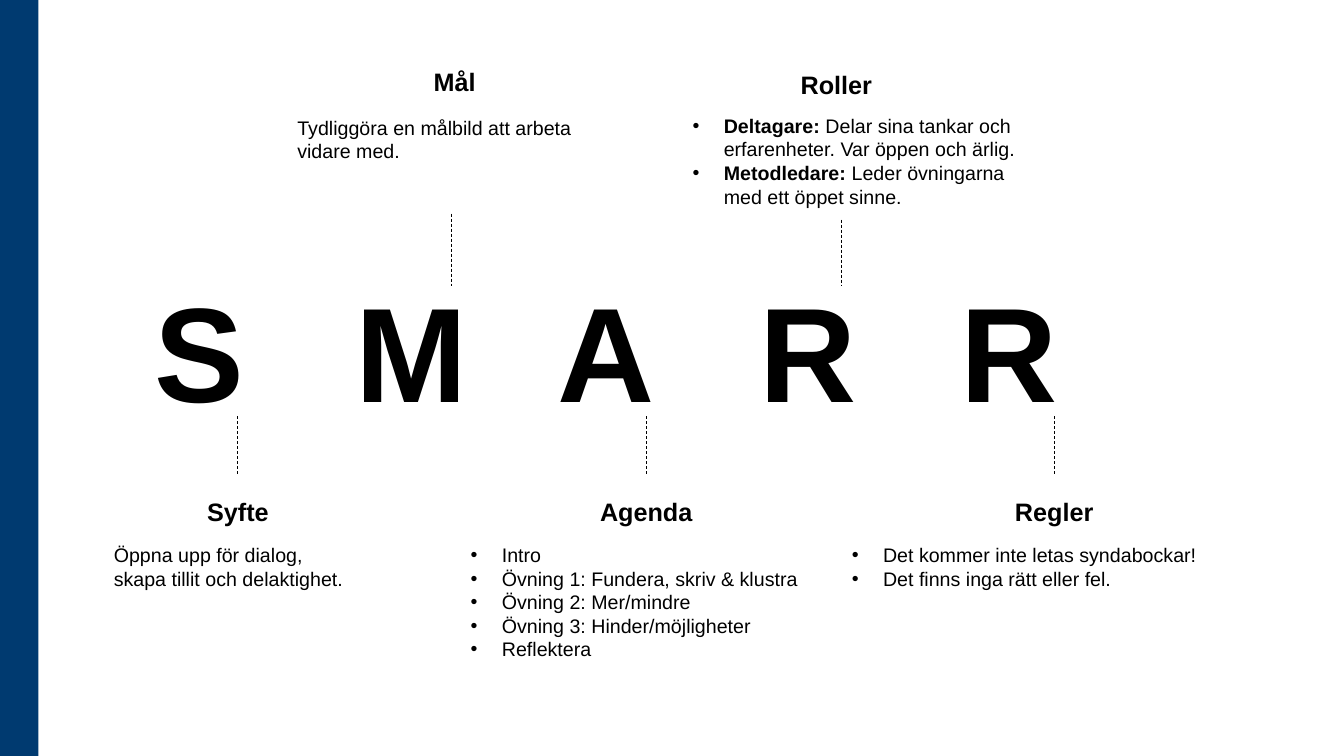
"""Builds the SMARR meeting slide: five letters, each tied to a topic above or below."""
from lxml import etree
from pptx import Presentation
from pptx.dml.color import RGBColor
from pptx.enum.dml import MSO_LINE
from pptx.enum.shapes import MSO_CONNECTOR, MSO_SHAPE
from pptx.enum.text import PP_ALIGN
from pptx.oxml.ns import qn
from pptx.util import Inches, Pt

DASH = MSO_LINE.DASH
LINE = MSO_CONNECTOR.STRAIGHT
RECT = MSO_SHAPE.RECTANGLE
LEFT, MID = PP_ALIGN.LEFT, PP_ALIGN.CENTER

THEME = {
    "font": "Arial",
    "ink": RGBColor(0x00, 0x00, 0x00),
    "bar": RGBColor(0x00, 0x3A, 0x70),
    "giant": 96,
    "head": 18,
    "body": 14,
    "rule": 0.5,
}

deck = Presentation()
deck.slide_width, deck.slide_height = Inches(13.33), Inches(7.5)
slide = deck.slides.add_slide(deck.slide_layouts[6])
shapes = slide.shapes


def place(x, y, w=0, h=0):
    """Turn percent shares of the slide into lengths."""
    wide, high = deck.slide_width / 100, deck.slide_height / 100
    return int(x * wide), int(y * high), int(w * wide), int(h * high)


def write(area, rows, size, bold=False, align=LEFT, dots=False):
    """Add a text box; a row is plain text or a bold lead with its text."""
    frame = shapes.add_textbox(*place(*area)).text_frame
    frame.word_wrap = True
    for i, row in enumerate(rows):
        para = frame.add_paragraph() if i else frame.paragraphs[0]
        lead, rest = row if isinstance(row, tuple) else (row, "")
        para.text = lead
        para.alignment = align
        if dots:
            props = para._p.get_or_add_pPr()
            props.set("marL", str(Inches(0.31)))
            props.set("indent", str(-Inches(0.31)))
            etree.SubElement(props, qn("a:buFont"), typeface="Arial")
            etree.SubElement(props, qn("a:buChar"), char="•")
        if rest:
            para.add_run().text = rest
        for j, run in enumerate(para.runs):
            run.font.name = THEME["font"]
            run.font.size = Pt(size)
            run.font.bold = bold or bool(rest and j == 0)
            run.font.color.rgb = THEME["ink"]
    return frame


bar = shapes.add_shape(RECT, *place(0, 0, 2.85, 100))
bar.shadow.inherit = False
bar.fill.solid()
bar.fill.fore_color.rgb = THEME["bar"]
bar.line.fill.background()

word = write((0, 34.8, 100, 22.93), ["\t".join("SMARR")], THEME["giant"], bold=True)
word.margin_left = Inches(1.53)
tabs = etree.SubElement(word.paragraphs[0]._p.get_or_add_pPr(), qn("a:tabLst"))
for step in range(1, 5):
    etree.SubElement(tabs, qn("a:tab"), pos=str(Inches(2 * step)), algn="l")

LOW, BASE, TEXT = (55.07, 62.67), 64.93, 71.2
TOPICS = [
    ("Syfte", (9.08, BASE, 17.25), (7.73, TEXT, 24.16, 7.6), 17.63, LOW, False,
     ["Öppna upp för dialog,\vskapa tillit och delaktighet."]),
    ("Mål", (25.36, 8.13, 16.95), (21.38, 14.67, 26.03, 7.6), 33.61, (28.27, 37.87), False,
     ["Tydliggöra en målbild att arbeta vidare med."]),
    ("Agenda", (39.46, BASE, 17.25), (34.28, TEXT, 28.88, 17.07), 48.09, LOW, True,
     ["Intro", "Övning 1: Fundera, skriv & klustra", "Övning 2: Mer/mindre",
      "Övning 3: Hinder/möjligheter", "Reflektera"]),
    ("Roller", (48.31, 8.53, 27.83), (50.79, 14.4, 27.83, 20.13), 62.64, (29.07, 37.87), True,
     [("Deltagare: ", "Delar sina tankar och erfarenheter. Var öppen och ärlig."),
      ("Metodledare: ", "Leder övningarna med ett öppet sinne.")]),
    ("Regler", (69.02, BASE, 18.83), (62.64, TEXT, 32.33, 7.6), 78.47, LOW, True,
     ["Det kommer inte letas syndabockar!", "Det finns inga rätt eller fel."]),
]

for title, top, area, x, (start, end), dots, rows in TOPICS:
    write((*top, 5.33), [title], THEME["head"], bold=True, align=MID)
    write(area, rows, THEME["body"], dots=dots)
    link = shapes.add_connector(LINE, *place(x, start)[:2], *place(x, end)[:2])
    link.line.color.rgb = THEME["ink"]
    link.line.width = Pt(THEME["rule"])
    link.line.dash_style = DASH
    etree.SubElement(link._element.spPr, qn("a:effectLst"))

deck.save("out.pptx")
